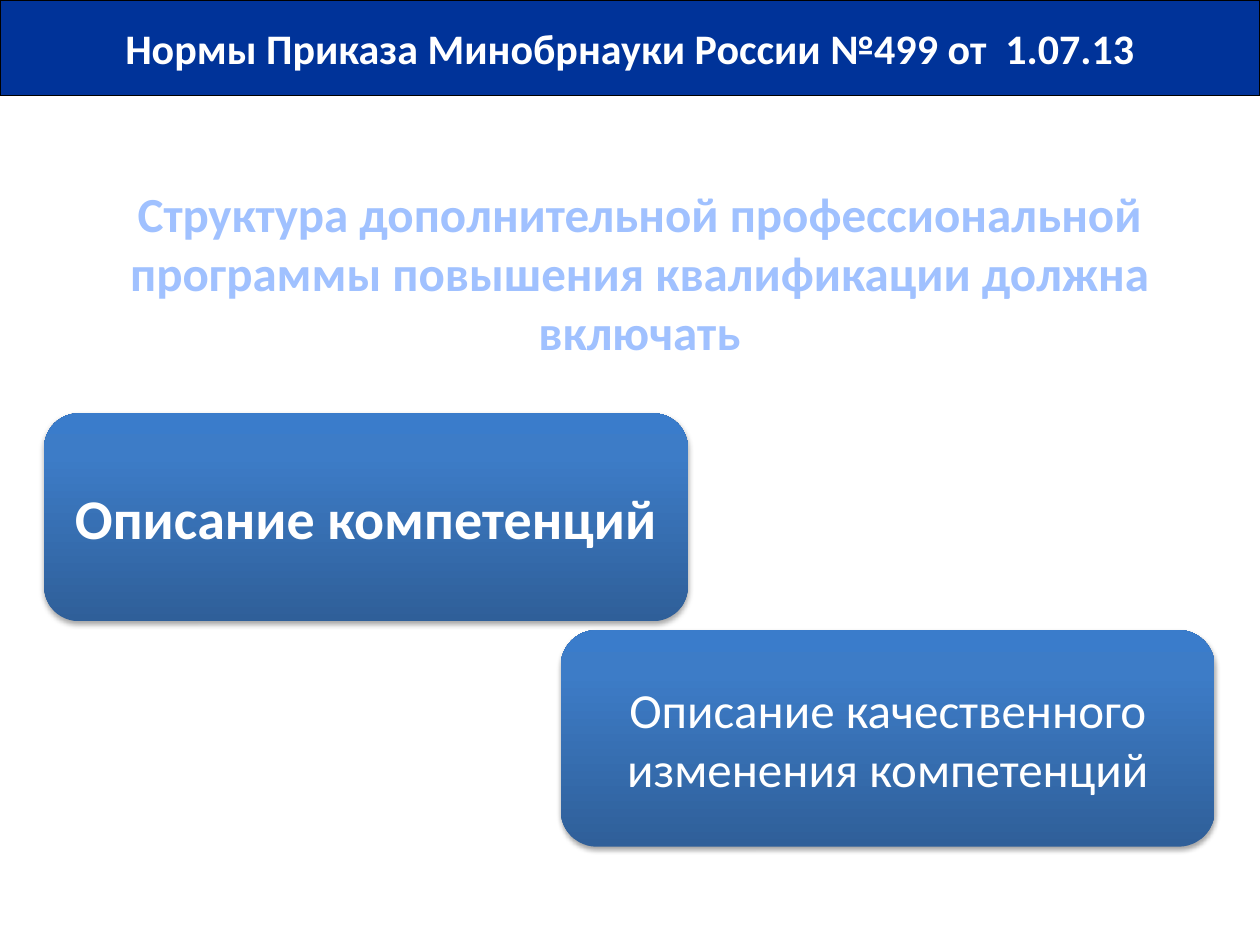
from lxml import etree
from pptx import Presentation
from pptx.dml.color import RGBColor
from pptx.enum.shapes import MSO_SHAPE
from pptx.enum.text import MSO_ANCHOR, MSO_AUTO_SIZE, PP_ALIGN
from pptx.oxml.ns import qn
from pptx.util import Inches, Pt

RECT, ROUND = MSO_SHAPE.RECTANGLE, MSO_SHAPE.ROUNDED_RECTANGLE
MIDDLE, CENTER = MSO_ANCHOR.MIDDLE, PP_ALIGN.CENTER
GROW = MSO_AUTO_SIZE.SHAPE_TO_FIT_TEXT
COLORS = {"band": "003399", "edge": "000000", "text": "FFFFFF", "trim": "467AB8"}
CARD = [(0, "2F5F99"), (80, "3D7CC7"), (100, "3A7CCB")]
GLOW = [(0, "BFD3F9"), (9, "A0C1FF"), (50, "003D85"), (79, "A0C1FF"), (100, "BFD3F9")]


def rgb(name):
    """Look up a named colour."""
    return RGBColor.from_string(COLORS[name])


def add(parent, tag, **attrs):
    """Append a drawing element and return it."""
    values = {key: str(value) for key, value in attrs.items()}
    return etree.SubElement(parent, qn(tag), values)


def blend(fill, node, stops, angle):
    """Give a fill a linear gradient with the listed stops."""
    fill.gradient()
    fill.gradient_angle = angle
    group = node.find(".//" + qn("a:gsLst"))
    for stop in list(group):
        group.remove(stop)
    for place, color in stops:
        add(add(group, "a:gs", pos=place * 1000), "a:srgbClr", val=color)


def write(shape, text, size, bold=True, **frame):
    """Write one centred line of text and return its run."""
    for key, value in frame.items():
        setattr(shape.text_frame, key, value)
    para = shape.text_frame.paragraphs[0]
    para.alignment = CENTER
    run = para.add_run()
    run.text = text
    for key, value in {"name": "Calibri", "size": Pt(size), "bold": bold}.items():
        setattr(run.font, key, value)
    run.font.color.rgb = rgb("text")
    return run


def add_band(slide, box, text):
    """Draw the title band."""
    band = slide.shapes.add_shape(RECT, *map(Inches, box))
    band.shadow.inherit = False
    band.fill.solid()
    band.fill.fore_color.rgb = rgb("band")
    band.line.color.rgb = rgb("edge")
    band.line.width = Pt(0.75)
    write(band, text, 24, word_wrap=False, vertical_anchor=MIDDLE)


def add_lead(slide, box, text):
    """Place the outlined gradient heading."""
    lead = slide.shapes.add_textbox(*map(Inches, box))
    run = write(lead, text, 28, word_wrap=True, auto_size=GROW)
    blend(run.font.fill, run._r, GLOW, 270)
    props = run._r.get_or_add_rPr()
    line = add(props, "a:ln", w=Pt(0.83))
    add(add(line, "a:solidFill"), "a:srgbClr", val=COLORS["trim"])
    props.insert(0, line)


def add_card(slide, box, text, size, bold):
    """Draw a rounded gradient card with a soft shadow."""
    card = slide.shapes.add_shape(ROUND, *map(Inches, box))
    card.shadow.inherit = False
    card.line.fill.background()
    blend(card.fill, card._element, CARD, 90)
    effects = card._element.spPr.find(qn("a:effectLst"))
    shade = add(effects, "a:outerShdw", blurRad=Pt(3.1), dist=Pt(1.8),
                dir=5400000, rotWithShape=0)
    add(add(shade, "a:srgbClr", val=COLORS["edge"]), "a:alpha", val=35000)
    write(card, text, size, bold, word_wrap=True, vertical_anchor=MIDDLE)


def main():
    """Build and save the slide."""
    deck = Presentation()
    deck.slide_width, deck.slide_height = Inches(10), Inches(7.5)
    slide = deck.slides.add_slide(deck.slide_layouts[6])
    add_band(slide, (0, 0, 10, 0.76),
             "Нормы Приказа Минобрнауки России №499 от  1.07.13")
    add_lead(slide, (0.47, 1.41, 9.21, 1.51),
             "Структура дополнительной профессиональной программы "
             "повышения квалификации должна включать")
    add_card(slide, (0.35, 3.28, 5.11, 1.65), "Описание компетенций", 32, True)
    add_card(slide, (4.45, 5, 5.19, 1.72),
             "Описание качественного изменения компетенций", 28, False)
    deck.save("out.pptx")


if __name__ == "__main__":
    main()
